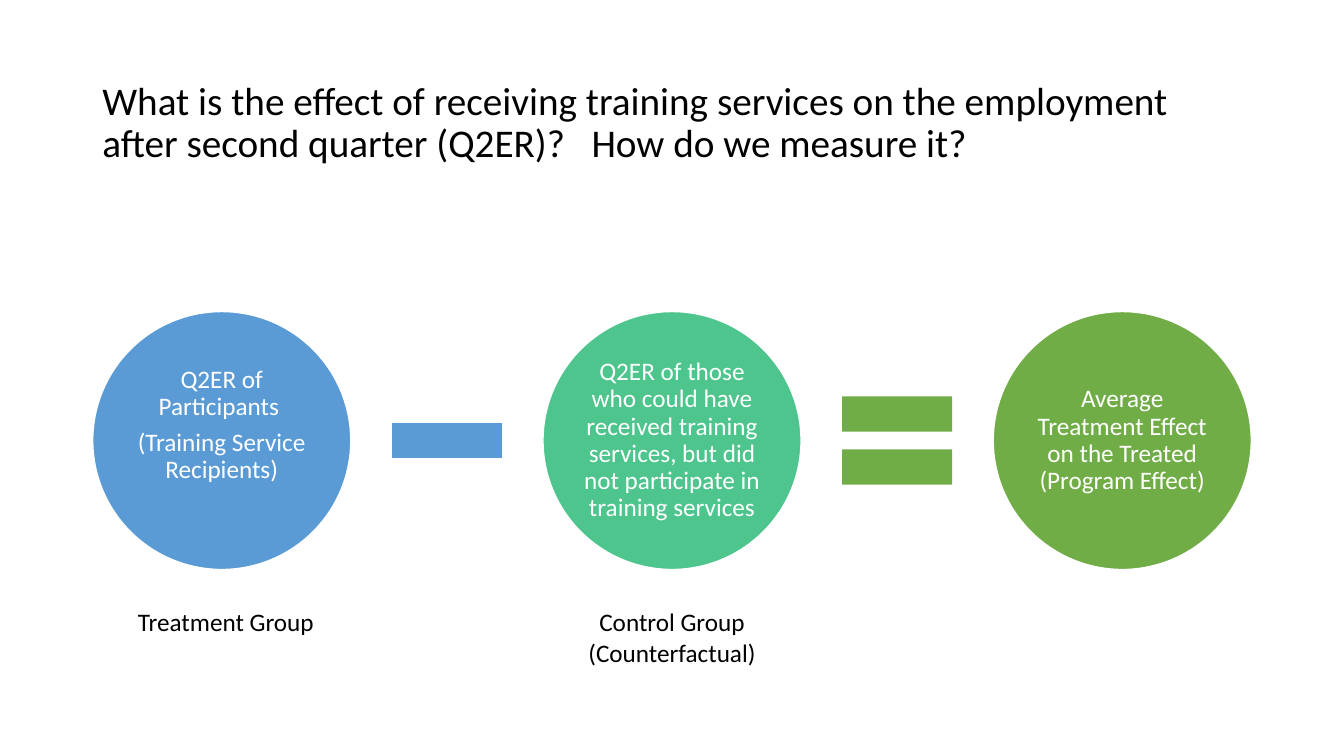
from dataclasses import dataclass

from pptx import Presentation
from pptx.dml.color import RGBColor
from pptx.enum.shapes import MSO_SHAPE as Preset
from pptx.enum.text import MSO_ANCHOR as Anchor, PP_ALIGN as Align
from pptx.shapes.autoshape import Shape
from pptx.slide import Slide
from pptx.text.text import TextFrame
from pptx.util import Inches, Pt


@dataclass(frozen=True)
class Theme:
    font: str = "Calibri"
    title_size: int = 28
    body_size: int = 18
    tight: float = 0.9
    gap: float = 6.3
    black: str = "000000"
    white: str = "FFFFFF"
    blue: str = "5B9BD5"
    teal: str = "4DC58D"
    green: str = "70AD47"


@dataclass(frozen=True)
class Area:
    column: float
    row: float
    columns: float
    rows: float

    def emu(self) -> tuple[int, int, int, int]:
        return (
            round(self.column * COLUMN),
            round(self.row * ROW),
            round(self.columns * COLUMN),
            round(self.rows * ROW),
        )


@dataclass(frozen=True)
class Term:
    lines: tuple[str, ...]
    color: str
    lift: float = 0


@dataclass(frozen=True)
class Operator:
    preset: Preset
    color: str


@dataclass(frozen=True)
class Label:
    lines: tuple[str, ...]
    area: Area
    size: int = 18
    align: Align = Align.LEFT
    anchor: Anchor = Anchor.TOP
    spacing: float = 1.0


THEME = Theme()
WIDTH, HEIGHT = Inches(13.33), Inches(7.5)
COLUMN, ROW = WIDTH / 100, HEIGHT / 100
CENTER_COLUMN, CENTER_ROW = 50, 58.27
PITCH = 16.75
TERM_SIZE, OPERATOR_SIZE = 19.2, 11.15
INSET = 0.03

EQUATION = (
    Term(
        ("Q2ER of Participants ", "(Training Service Recipients)"),
        THEME.blue,
        lift=0.3,
    ),
    Operator(Preset.MATH_MINUS, THEME.blue),
    Term(
        (
            "Q2ER of those who could have received training services, "
            "but did not participate in training services",
        ),
        THEME.teal,
    ),
    Operator(Preset.MATH_EQUAL, THEME.green),
    Term(
        ("Average Treatment Effect on the Treated (Program Effect)",),
        THEME.green,
    ),
)

LABELS = (
    Label(
        (
            "What is the effect of receiving training services on the employment "
            "after second quarter (Q2ER)?   How do we measure it?",
        ),
        Area(6.88, 8.13, 86.25, 16.53),
        size=THEME.title_size,
        anchor=Anchor.MIDDLE,
        spacing=THEME.tight,
    ),
    Label(
        ("Control Group", "(Counterfactual)"),
        Area(39.75, 79.6, 20.5, 9.4),
        size=THEME.body_size,
        align=Align.CENTER,
    ),
    Label(("Treatment Group",), Area(9.53, 79.6, 17.55, 5.4), size=THEME.body_size),
)


def write(frame: TextFrame, lines: tuple[str, ...], size: int, color: str,
          align: Align, spacing: float, gap: float = 0) -> None:
    frame.word_wrap = True
    frame.text = "\n".join(lines)
    for paragraph in frame.paragraphs:
        paragraph.alignment = align
        paragraph.line_spacing = spacing
        paragraph.space_after = Pt(gap)
        paragraph.font.name = THEME.font
        paragraph.font.size = Pt(size)
        paragraph.font.color.rgb = RGBColor.from_string(color)


def square(place: int, size: float) -> Area:
    rows = size * COLUMN / ROW
    middle = CENTER_COLUMN + (place - len(EQUATION) // 2) * PITCH
    return Area(middle - size / 2, CENTER_ROW - rows / 2, size, rows)


def add_filled(page: Slide, preset: Preset, area: Area, color: str) -> Shape:
    shape = page.shapes.add_shape(preset, *area.emu())
    shape.shadow.inherit = False
    shape.fill.solid()
    shape.fill.fore_color.rgb = RGBColor.from_string(color)
    shape.line.fill.background()
    return shape


def add_term(page: Slide, term: Term, place: int) -> None:
    circle = add_filled(page, Preset.OVAL, square(place, TERM_SIZE), term.color)
    circle.line.color.rgb = RGBColor.from_string(THEME.white)
    circle.line.width = Pt(1)
    frame = circle.text_frame
    frame.margin_left = frame.margin_right = frame.margin_top = Inches(INSET)
    frame.margin_bottom = Inches(INSET + term.lift)
    frame.vertical_anchor = Anchor.MIDDLE
    write(frame, term.lines, THEME.body_size, THEME.white, Align.CENTER,
          THEME.tight, THEME.gap)


def add_label(page: Slide, label: Label) -> None:
    box = page.shapes.add_textbox(*label.area.emu())
    box.text_frame.vertical_anchor = label.anchor
    write(box.text_frame, label.lines, label.size, THEME.black, label.align,
          label.spacing)


def main() -> None:
    deck = Presentation()
    deck.slide_width, deck.slide_height = WIDTH, HEIGHT
    page = deck.slides.add_slide(deck.slide_layouts[6])
    for place, part in enumerate(EQUATION):
        if isinstance(part, Term):
            add_term(page, part, place)
        else:
            add_filled(page, part.preset, square(place, OPERATOR_SIZE), part.color)
    for label in LABELS:
        add_label(page, label)
    deck.save("out.pptx")


if __name__ == "__main__":
    main()
